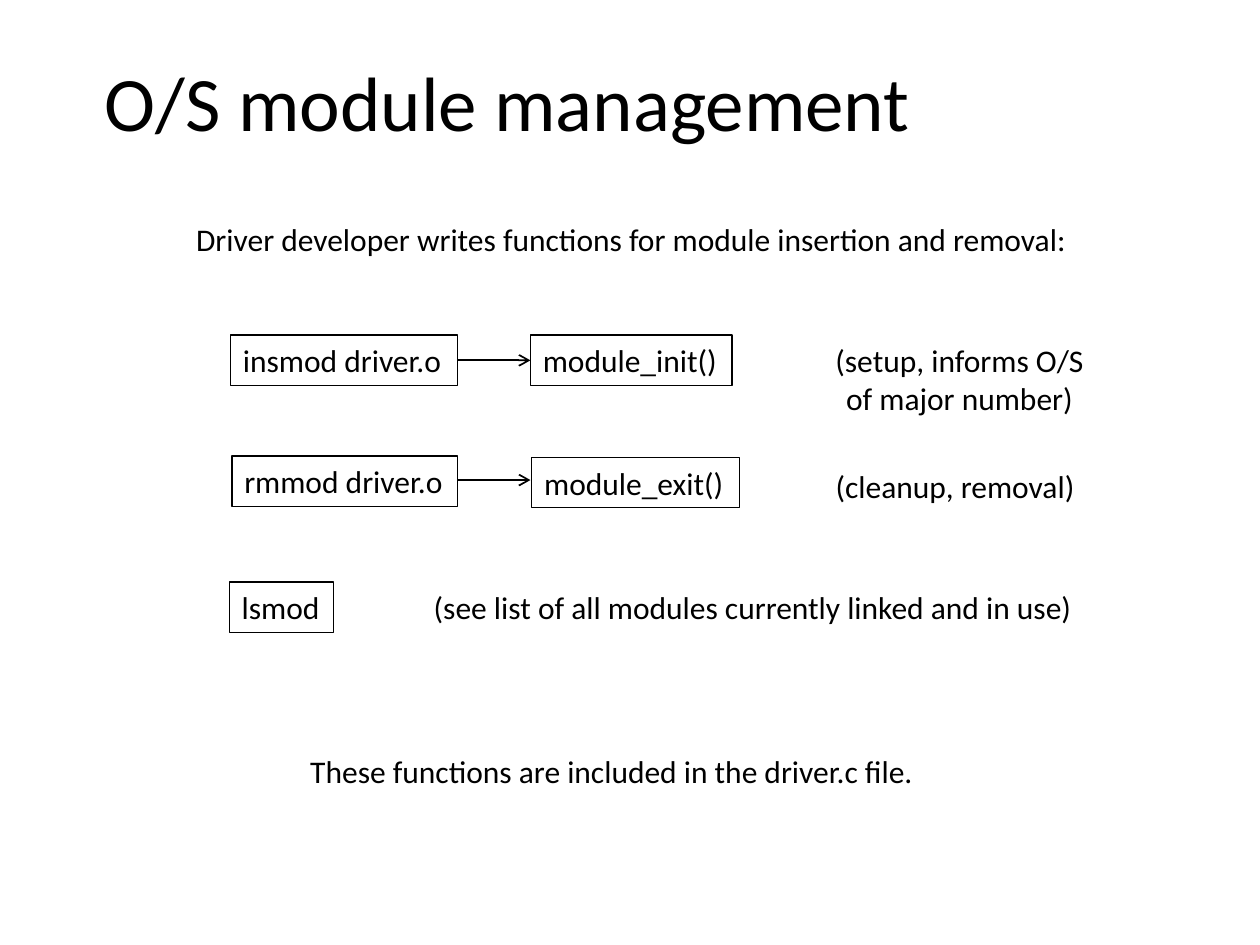
from lxml import etree
from pptx import Presentation
from pptx.dml.color import RGBColor
from pptx.enum.shapes import MSO_CONNECTOR as Connector, MSO_SHAPE as Shape
from pptx.enum.text import MSO_ANCHOR as Anchor, MSO_AUTO_SIZE as AutoSize, PP_ALIGN as Align
from pptx.oxml.ns import qn
from pptx.util import Inches, Pt

FONT = "Calibri"
BLACK = "000000"
LINE_HEIGHT = 0.4


def color(hex_value):
    return RGBColor.from_string(hex_value)


def write_text(shape, text, size=18, align=Align.CENTER, ink=BLACK):
    """Fill a shape with one paragraph per line of text."""
    frame = shape.text_frame
    frame.text = text
    frame.word_wrap = False
    frame.auto_size = AutoSize.NONE
    frame.vertical_anchor = Anchor.TOP
    for para in frame.paragraphs:
        para.alignment = align
        for span in para.runs:
            span.font.name = FONT
            span.font.size = Pt(size)
            span.font.color.rgb = color(ink)


def add_title(slide, text):
    title = slide.shapes.title
    title.left, title.top = Inches(0.7), Inches(0.38)
    title.width, title.height = Inches(6.66), Inches(0.84)
    write_text(title, text, size=44)


def add_label(slide, text, left, top, width, height=LINE_HEIGHT):
    label = slide.shapes.add_textbox(
        Inches(left), Inches(top), Inches(width), Inches(height))
    write_text(label, text)


def add_box(slide, text, left, top, width):
    box = slide.shapes.add_shape(
        Shape.RECTANGLE, Inches(left), Inches(top), Inches(width), Inches(LINE_HEIGHT))
    box.shadow.inherit = False
    box.fill.background()
    box.line.color.rgb = color(BLACK)
    box.line.width = Pt(0.75)
    write_text(box, text, align=Align.LEFT)


def add_arrow(slide, start, end, y):
    arrow = slide.shapes.add_connector(
        Connector.STRAIGHT, Inches(start), Inches(y), Inches(end), Inches(y))
    arrow.line.color.rgb = color(BLACK)
    arrow.line.width = Pt(1)
    # Open arrowhead, no shadow
    etree.SubElement(arrow.line._get_or_add_ln(), qn("a:tailEnd"), type="arrow")
    etree.SubElement(arrow._element.spPr, qn("a:effectLst"))


def main():
    deck = Presentation()
    deck.slide_width, deck.slide_height = Inches(10), Inches(7.5)
    slide = deck.slides.add_slide(deck.slide_layouts[5])

    # Title and introduction
    add_title(slide, "O/S module management")
    add_label(slide, "Driver developer writes functions for module insertion and removal:",
              1.44, 1.7, 7.14)

    # Commands and the functions they call
    add_box(slide, "insmod driver.o", 1.83, 2.66, 1.8)
    add_box(slide, "module_init()", 4.21, 2.66, 1.6)
    add_box(slide, "rmmod driver.o", 1.84, 3.62, 1.79)
    add_box(slide, "module_exit()", 4.22, 3.63, 1.65)
    add_box(slide, "lsmod", 1.82, 4.62, 0.83)
    for y in (2.86, 3.81):
        add_arrow(slide, 3.63, 4.21, y)

    # Explanations
    add_label(slide, "(setup, informs O/S\nof major number)", 6.52, 2.66, 2.19, height=0.71)
    add_label(slide, "(cleanup, removal)", 6.52, 3.66, 2.12)
    add_label(slide, "(see list of all modules currently linked and in use)", 3.31, 4.62, 5.33)

    # Closing remark
    add_label(slide, "These functions are included in the driver.c file.", 2.33, 5.92, 5.05)

    deck.save("out.pptx")


if __name__ == "__main__":
    main()
